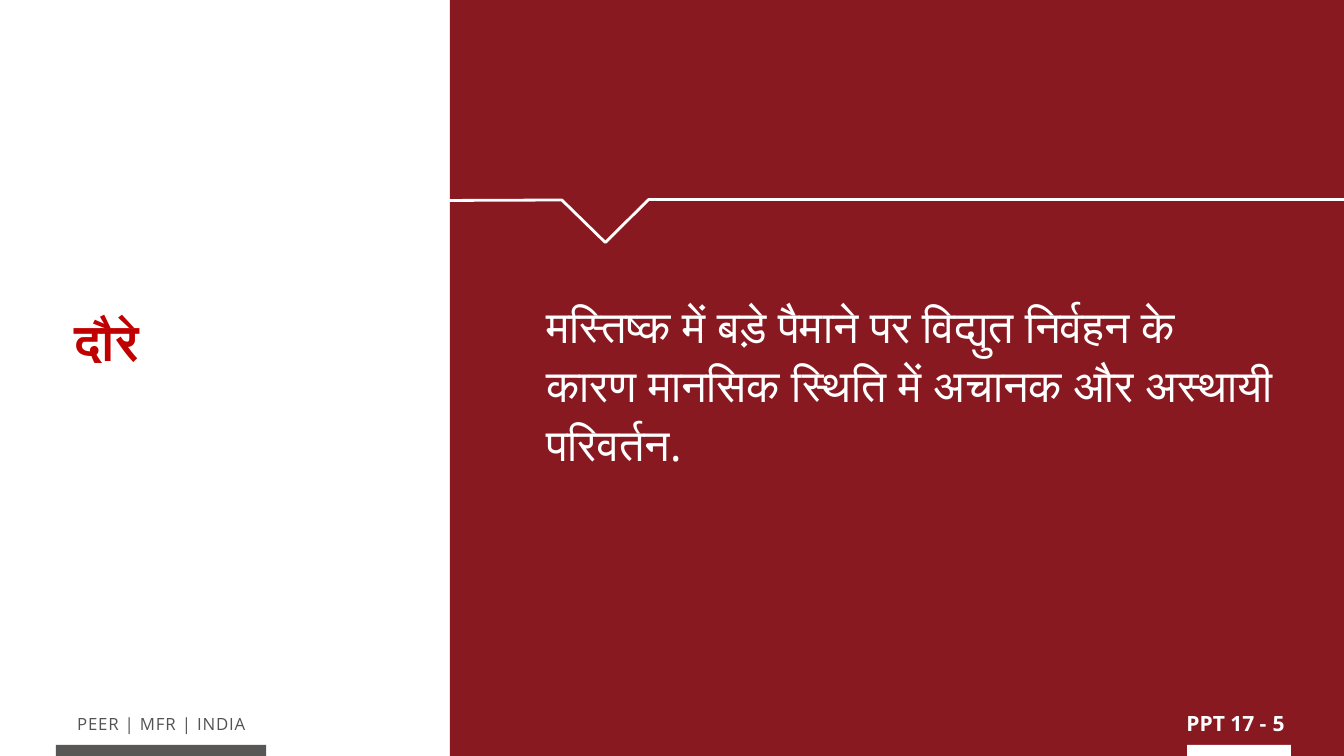
import pptx
import pptx.dml.color
import pptx.enum.text
import pptx.oxml.ns
import pptx.util
from lxml import etree
from pptx.enum.shapes import MSO_SHAPE
from pptx.util import Cm, Pt

RGBColor = pptx.dml.color.RGBColor
PP_ALIGN = pptx.enum.text.PP_ALIGN
MAROON = RGBColor(0x88, 0x19, 0x20)
RED = RGBColor(0xC0, 0x00, 0x00)
GREY = RGBColor(0x58, 0x57, 0x56)
FOOTER_GREY = RGBColor(0x53, 0x53, 0x53)
WHITE = RGBColor(0xFF, 0xFF, 0xFF)
FONT = "Open Sans"
WIDTH, HEIGHT = 67.74, 38.1
BAR_HEIGHT = 0.56
BAR_TOP = HEIGHT - BAR_HEIGHT
PANEL_LEFT = 22.68

# left, top, width, height in cm, fill
BLOCKS = [
    (PANEL_LEFT, 0, WIDTH - PANEL_LEFT, HEIGHT, MAROON),
    (2.82, BAR_TOP, 10.59, BAR_HEIGHT, GREY),
    (59.84, BAR_TOP, 5.23, BAR_HEIGHT, WHITE),
]
NOTCHED_LINE = [(20.96, 10.11), (28.32, 10.08), (30.51, 12.22), (32.69, 10.06), (WIDTH, 10.06)]

FOOTER = {"alignment": PP_ALIGN.CENTER}
TITLE = {"alignment": PP_ALIGN.LEFT, "line_spacing": 0.8}
BODY = {"alignment": PP_ALIGN.LEFT, "line_spacing": 1.1}
# text, box in cm, inset in cm, wrap, paragraph format, size, bold, colour, letter spacing in pt
TEXTS = [
    ("PEER | MFR | INDIA", (1.68, 35.76, 12.9, 1.6), 0.23, True, FOOTER, 24, False, FOOTER_GREY, 1.2),
    ("PPT 17 -", (59.56, 35.59, 4.52, 1.88), 0.23, False, FOOTER, 30, True, WHITE, 0),
    ("5", (63.91, 35.59, 1.07, 1.88), 0.23, False, FOOTER, 30, True, WHITE, 0),
    ("दौरे", (3.53, 15.98, 19.76, 3.05), 0.23, True, TITLE, 72, True, RED, 0),
    ("मस्तिष्क में बड़े पैमाने पर विद्युत निर्वहन के कारण मानसिक स्थिति में अचानक और अस्थायी परिवर्तन.",
     (27.38, 14.61, 37.06, 9.25), 0.15, True, BODY, 64, False, WHITE, 0),
]


def set_all(target, values):
    for name, value in values.items():
        setattr(target, name, value)


def add_block(slide, left, top, width, height, fill):
    block = slide.shapes.add_shape(MSO_SHAPE.RECTANGLE, *map(Cm, (left, top, width, height)))
    block.shadow.inherit = False
    block.fill.solid()
    block.fill.fore_color.rgb = fill
    block.line.fill.background()


def add_text(slide, text, box, inset, wrap, layout, size, bold, colour, tracking):
    frame = slide.shapes.add_textbox(*map(Cm, box)).text_frame
    margins = ("margin_left", "margin_top", "margin_right", "margin_bottom")
    set_all(frame, dict.fromkeys(margins, Cm(inset)))
    set_all(frame, {"word_wrap": wrap, "auto_size": pptx.enum.text.MSO_AUTO_SIZE.SHAPE_TO_FIT_TEXT})
    paragraph = frame.paragraphs[0]
    set_all(paragraph, layout)
    run = paragraph.add_run()
    run.text = text
    set_all(run.font, {"name": FONT, "size": Pt(size), "bold": bold})
    run.font.color.rgb = colour
    properties = run.font._element
    # Devanagari takes the complex-script typeface
    etree.SubElement(properties, pptx.oxml.ns.qn("a:cs"), typeface=FONT)
    if tracking:
        properties.set("spc", str(round(tracking * 100)))


def add_notched_line(slide):
    start, *rest = [(Cm(x), Cm(y)) for x, y in NOTCHED_LINE]
    builder = slide.shapes.build_freeform(*start)
    builder.add_line_segments(rest, close=False)
    notch = builder.convert_to_shape()
    notch.shadow.inherit = False
    notch.fill.background()
    notch.line.color.rgb = WHITE
    notch.line.width = Pt(4)


def main():
    deck = pptx.Presentation()
    set_all(deck, {"slide_width": Cm(WIDTH), "slide_height": Cm(HEIGHT)})
    slide = deck.slides.add_slide(deck.slide_layouts[6])
    for block in BLOCKS:
        add_block(slide, *block)
    for entry in TEXTS:
        add_text(slide, *entry)
    add_notched_line(slide)
    deck.save("out.pptx")


if __name__ == "__main__":
    main()
